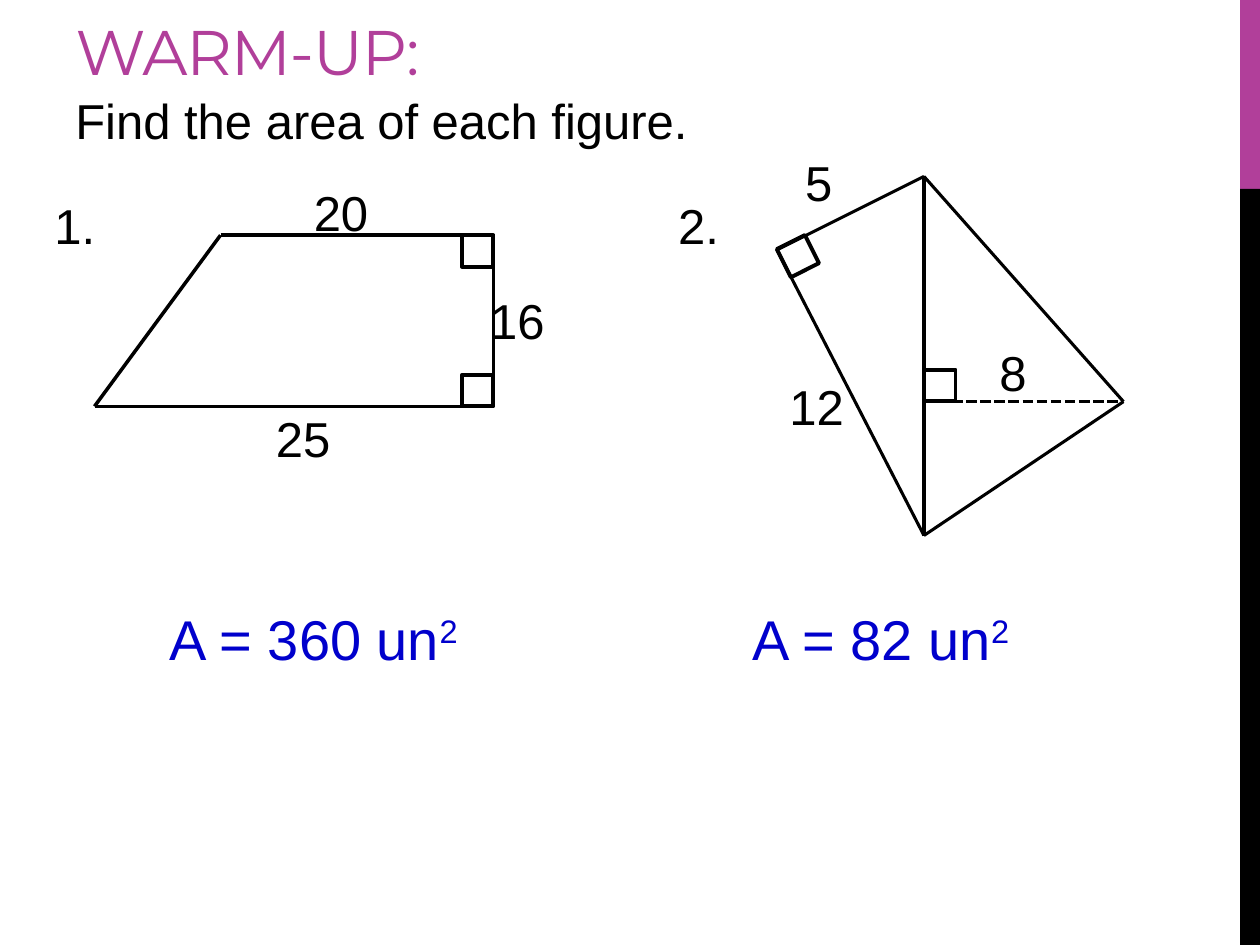
from lxml.etree import SubElement
from pptx import Presentation
from pptx.dml.color import RGBColor
from pptx.enum.dml import MSO_LINE
from pptx.enum.shapes import MSO_CONNECTOR, MSO_SHAPE
from pptx.enum.text import MSO_ANCHOR, MSO_AUTO_SIZE, PP_ALIGN
from pptx.oxml.ns import qn
from pptx.util import Inches, Pt

COLS, ROWS = 120, 90
BLACK, PURPLE, BLUE = "000000", "B13F9A", "0000CC"


def cell(n):
    return Inches(n / 12)


def color(code):
    return RGBColor.from_string(code)


def set_font(font, name, size, code):
    font.name = name
    font.size = Pt(size)
    font.color.rgb = color(code)


def add_title(s, text):
    sp = s.shapes.title
    sp.left, sp.top, sp.width, sp.height = map(cell, (6, -9, 76, 18))
    tf = sp.text_frame
    tf.vertical_anchor = MSO_ANCHOR.BOTTOM
    p = tf.paragraphs[0]
    p.alignment = PP_ALIGN.LEFT
    r = p.add_run()
    r.text = text
    set_font(p.font, "Montserrat", 36, PURPLE)
    r.font._element.set("spc", "-60")


def add_text(s, text, col, row, cols=11.2, size=28, code=BLACK):
    sp = s.shapes.add_textbox(cell(col), cell(row), cell(cols), cell(size / 4.1))
    tf = sp.text_frame
    tf.word_wrap = True
    tf.auto_size = MSO_AUTO_SIZE.SHAPE_TO_FIT_TEXT
    p = tf.paragraphs[0]
    p.add_run().text = text
    set_font(p.font, "Arial", size, code)
    return p


def add_answer(s, text, col):
    p = add_text(s, text, col, 57, 38, 32, BLUE)
    r = p.add_run()
    r.text = "2"
    r.font._element.set("baseline", "30000")


def add_bar(s, row, rows, code):
    sp = s.shapes.add_shape(MSO_SHAPE.RECTANGLE, cell(COLS - 1.9), cell(row), cell(1.9), cell(rows))
    sp.shadow.inherit = False
    sp.fill.solid()
    sp.fill.fore_color.rgb = color(code)
    sp.line.fill.background()


def add_line(shapes, start, end, width):
    points = map(cell, (*start, *end))
    line = shapes.add_connector(MSO_CONNECTOR.STRAIGHT, *points)
    line.line.color.rgb = color(BLACK)
    line.line.width = Pt(width)
    SubElement(line._element.spPr, qn("a:effectLst"))
    return line


def add_figure(s, sides, width):
    group = s.shapes.add_group_shape()
    for start, end in sides:
        add_line(group.shapes, start, end, width)


def add_right_angle(s, col, row, rotation=0):
    sp = s.shapes.add_shape(MSO_SHAPE.RECTANGLE, cell(col), cell(row), cell(3), cell(3))
    sp.shadow.inherit = False
    sp.fill.background()
    sp.line.color.rgb = color(BLACK)
    sp.line.width = Pt(2.25)
    sp.rotation = rotation


def add_trapezoid(s):
    corners = [(21, 22.4), (47, 22.4), (47, 38.7), (9, 38.7)]
    add_figure(s, zip(corners, corners[1:] + corners[:1]), 2)
    for row in (22.4, 35.7):
        add_right_angle(s, 44, row)
    for text, col, row in (("20", 28.7, 16.8), ("25", 25.1, 38.3), ("16", 45.5, 27.1)):
        add_text(s, text, col, row)


def add_kite(s):
    top, right, bottom, left = (88, 16.8), (107, 38.25), (88, 51), (74, 23.8)
    sides = [(top, bottom), (top, right), (right, bottom), (top, left), (left, bottom)]
    add_figure(s, sides, 1.75)
    height = add_line(s.shapes, (88, 38.25), right, 2)
    height.line.dash_style = MSO_LINE.SQUARE_DOT
    add_right_angle(s, 74.5, 22.9, 333.3)
    add_right_angle(s, 88, 35.2)
    for text, col, row in (("5", 75.5, 13.9), ("12", 74, 35.3), ("8", 94, 32)):
        add_text(s, text, col, row)


def main():
    prs = Presentation()
    prs.slide_width, prs.slide_height = cell(COLS), cell(ROWS)
    s = prs.slides.add_slide(prs.slide_layouts[5])
    add_bar(s, 0, 18, PURPLE)
    add_bar(s, 18, ROWS - 18, BLACK)
    add_title(s, "WARM-UP:")
    add_text(s, "Find the area of each figure.", 6, 8, 111)
    add_text(s, "1.", 4, 18)
    add_text(s, "2.", 63.4, 18)
    add_trapezoid(s)
    add_kite(s)
    add_answer(s, "A = 360 un", 15)
    add_answer(s, "A = 82 un", 70.5)
    prs.save("out.pptx")


if __name__ == "__main__":
    main()
